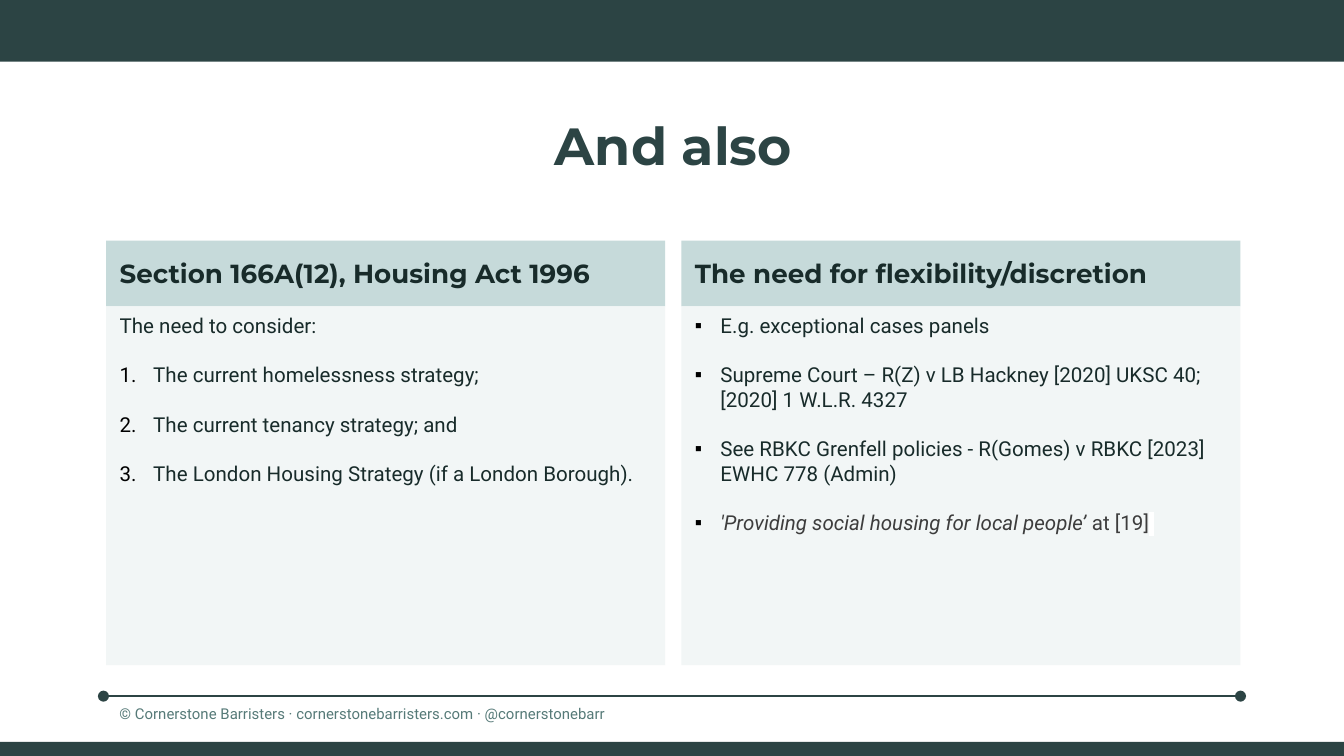
from dataclasses import dataclass

from lxml.etree import SubElement
from pptx import Presentation
from pptx.dml.color import RGBColor
from pptx.enum.shapes import MSO_CONNECTOR, MSO_SHAPE
from pptx.enum.text import MSO_ANCHOR, MSO_AUTO_SIZE, PP_ALIGN
from pptx.oxml.ns import qn
from pptx.util import Inches, Pt

DARK = RGBColor(0x2C, 0x44, 0x44)
INK = RGBColor(0x18, 0x2B, 0x2A)
QUOTE = RGBColor(0x3D, 0x3D, 0x3D)
FOOTER = RGBColor(0x56, 0x7A, 0x78)
HEADING_FILL = RGBColor(0xC6, 0xDA, 0xDA)
BODY_FILL = RGBColor(0xF2, 0xF6, 0xF6)
HEAD_FONT, BODY_FONT = "Montserrat", "Roboto"

SLIDE_W = 10
SLIDE_H = SLIDE_W * 9 / 16
LEFT, COL_W, COL_GAP = 0.79, 4.16, 0.12
HEAD_TOP, HEAD_H, BODY_H = 1.79, 0.49, 2.67


@dataclass
class Item:
    text: str
    marker: str = ""  # "1." numbers the item, any other text is its bullet
    indent: float = 0


@dataclass
class Column:
    heading: str
    items: list[Item]


COLUMNS = [
    Column("Section 166A(12), Housing Act 1996", [
        Item("The need to consider:"),
        Item("The current homelessness strategy;", "1.", 0.25),
        Item("The current tenancy strategy; and", "1.", 0.25),
        Item("The London Housing Strategy (if a London Borough).", "1.", 0.25),
    ]),
    Column("The need for flexibility/discretion", [
        Item("E.g. exceptional cases panels", "▪", 0.19),
        Item("Supreme Court – R(Z) v LB Hackney [2020] UKSC 40; "
             "[2020] 1 W.L.R. 4327", "▪", 0.19),
        Item("See RBKC Grenfell policies - R(Gomes) v RBKC [2023] "
             "EWHC 778 (Admin)", "▪", 0.19),
        Item("'Providing social housing for local people’ ", "▪", 0.19),
    ]),
]


def style_run(r, size: float, font: str, color: RGBColor,
              bold: bool = False, italic: bool = False) -> None:
    f = r.font
    f.size, f.name, f.bold, f.italic = Pt(size), font, bold, italic
    f.color.rgb = color


def place(sp, x: float, y: float, w: float, h: float, anchor=MSO_ANCHOR.TOP):
    """Move a text shape and return its text frame."""
    sp.left, sp.top, sp.width, sp.height = (Inches(v) for v in (x, y, w, h))
    tf = sp.text_frame
    tf.word_wrap, tf.auto_size = True, MSO_AUTO_SIZE.NONE
    tf.vertical_anchor = anchor
    return tf


def fill(sp, color: RGBColor) -> None:
    sp.fill.solid()
    sp.fill.fore_color.rgb = color


def set_marker(p, marker: str = "", indent: float = 0) -> None:
    pPr = p._p.get_or_add_pPr()
    pPr.set("marL", str(Inches(indent)))
    pPr.set("indent", str(-Inches(indent)))
    if not marker:
        SubElement(pPr, qn("a:buNone"))
        return
    color = SubElement(pPr, qn("a:buClr"))
    SubElement(color, qn("a:srgbClr"), val="000000")
    if marker == "1.":
        SubElement(pPr, qn("a:buFont"), typeface=BODY_FONT)
        SubElement(pPr, qn("a:buAutoNum"), type="arabicPeriod")
    else:
        SubElement(pPr, qn("a:buFont"), typeface="Arial")
        SubElement(pPr, qn("a:buChar"), char=marker)


def add_heading(sp, text: str, x: float) -> None:
    tf = place(sp, x, HEAD_TOP, COL_W, HEAD_H, MSO_ANCHOR.MIDDLE)
    fill(sp, HEADING_FILL)
    tf.text = text
    p = tf.paragraphs[0]
    set_marker(p)
    p.space_before = Pt(0)
    style_run(p.runs[0], 14, HEAD_FONT, INK, bold=True)


def add_items(sp, items: list[Item], x: float):
    tf = place(sp, x, HEAD_TOP + HEAD_H, COL_W, BODY_H)
    fill(sp, BODY_FILL)
    for i, item in enumerate(items):
        p = tf.add_paragraph() if i else tf.paragraphs[0]
        p.text = item.text
        set_marker(p, item.marker, item.indent)
        p.space_before = Pt(13.2 if i else 0)
        style_run(p.runs[0], 11, BODY_FONT, INK)
    return tf


def add_bar(slide, y: float, h: float) -> None:
    sp = slide.shapes.add_shape(MSO_SHAPE.RECTANGLE, 0, Inches(y),
                                Inches(SLIDE_W), Inches(h))
    sp.shadow.inherit = False
    fill(sp, DARK)
    sp.line.fill.background()


def main() -> None:
    prs = Presentation()
    prs.slide_width, prs.slide_height = Inches(SLIDE_W), Inches(SLIDE_H)
    slide = prs.slides.add_slide(prs.slide_layouts[4])  # Comparison
    title, *boxes = slide.placeholders

    # Title
    tf = place(title, LEFT, 0.79, 2 * COL_W + COL_GAP, 0.58)
    tf.text = "And also"
    tf.paragraphs[0].alignment = PP_ALIGN.CENTER
    style_run(tf.paragraphs[0].runs[0], 28, HEAD_FONT, DARK, bold=True)

    # Two columns, each a heading over a list
    for i, col in enumerate(COLUMNS):
        x = LEFT + i * (COL_W + COL_GAP)
        add_heading(boxes[2 * i], col.heading, x)
        tf = add_items(boxes[2 * i + 1], col.items, x)

    # Closing quotation: italic words, plain reference, highlighted space
    p = tf.paragraphs[-1]
    style_run(p.runs[0], 11, BODY_FONT, QUOTE, italic=True)
    for text in ("at [19]", " "):
        r = p.add_run()
        r.text = text
        style_run(r, 11, BODY_FONT, QUOTE)
    rPr = r._r.get_or_add_rPr()
    highlight = SubElement(rPr, qn("a:highlight"))
    SubElement(highlight, qn("a:srgbClr"), val="FFFFFF")
    rPr.find(qn("a:solidFill")).addnext(highlight)

    # Top and bottom bars
    add_bar(slide, 0, 0.46)
    add_bar(slide, 5.52, SLIDE_H - 5.52)

    # Footer rule with round ends
    rule = slide.shapes.add_connector(MSO_CONNECTOR.STRAIGHT, Inches(0.77),
                                      Inches(5.18), Inches(9.23), Inches(5.18))
    rule.line.color.rgb, rule.line.width = DARK, Pt(0.75)
    ln = rule.line._get_or_add_ln()
    for end in ("a:headEnd", "a:tailEnd"):
        SubElement(ln, qn(end), type="oval", w="med", len="med")
    SubElement(rule._element.spPr, qn("a:effectLst"))

    # Footer text
    sp = slide.shapes.add_textbox(0, 0, 0, 0)
    tf = place(sp, LEFT, 5.14, 4.95, 0.31)
    tf.margin_top = tf.margin_bottom = Inches(0.1)
    tf.text = "© Cornerstone Barristers · cornerstonebarristers.com · @cornerstonebarr"
    style_run(tf.paragraphs[0].runs[0], 8, BODY_FONT, FOOTER)

    prs.save("out.pptx")


if __name__ == "__main__":
    main()
